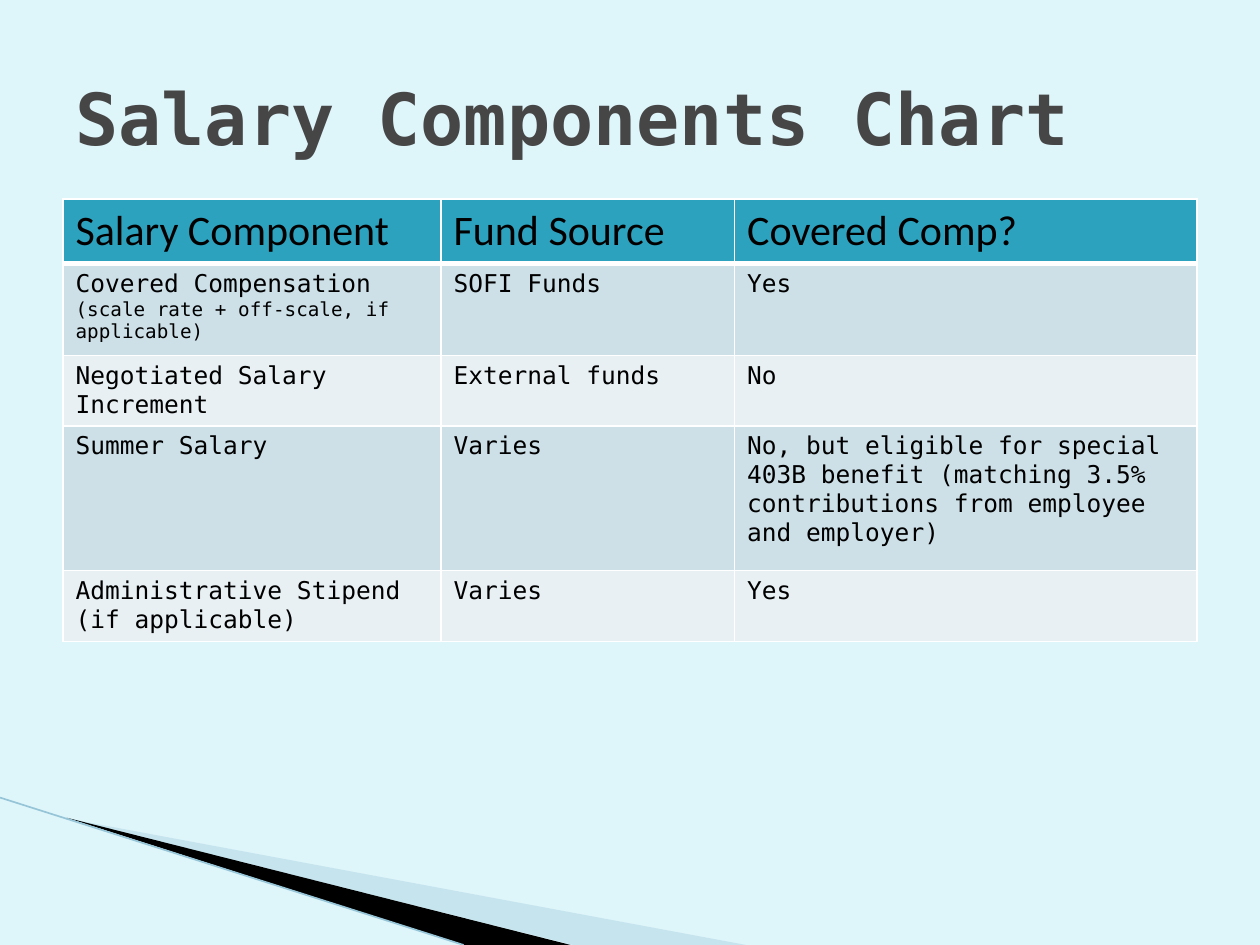
"""Build the salary components slide."""
import dataclasses

import lxml.etree
import pptx
import pptx.dml.color
import pptx.enum.shapes
import pptx.enum.text
import pptx.oxml.ns
import pptx.util

Inches = pptx.util.Inches
Pt = pptx.util.Pt
qn = pptx.oxml.ns.qn


def rgb(value):
    """Turn a hex string into a colour."""
    return pptx.dml.color.RGBColor.from_string(value)


@dataclasses.dataclass(frozen=True)
class Theme:
    """Colours, fonts and type sizes."""
    background: str = "DEF5FA"
    title: str = "464646"
    text: str = "000000"
    header: str = "2DA2BF"
    bands: tuple = ("CDE0E8", "E8F0F4")
    border: str = "FFFFFF"
    pale_wedge: str = "A0CBDC"
    dark_wedge: str = "000000"
    edge: str = "97C5D8"
    mono: str = "DejaVu Sans Mono"
    sans: str = "Calibri"
    title_size: int = 41
    header_size: int = 24
    body_size: int = 14
    note_size: int = 11


class SlideBuilder:
    """Draw themed elements on one slide."""

    def __init__(self, slide, theme):
        """Keep the slide and theme, and paint the background."""
        self.slide = slide
        self.theme = theme
        slide.background.fill.solid()
        slide.background.fill.fore_color.rgb = rgb(theme.background)

    def style(self, paragraph, size, color, font, bold=False):
        """Set the font of a paragraph."""
        paragraph.font.size = Pt(size)
        paragraph.font.color.rgb = rgb(color)
        paragraph.font.name = font
        paragraph.font.bold = bold

    def wedge(self, points, color, opacity=100):
        """Draw a filled outline without a line."""
        corners = [(Inches(x), Inches(y)) for x, y in points]
        builder = self.slide.shapes.build_freeform(*corners[0], scale=1.0)
        builder.add_line_segments(corners[1:], close=True)
        shape = builder.convert_to_shape()
        shape.shadow.inherit = False
        shape.line.fill.background()
        shape.fill.solid()
        shape.fill.fore_color.rgb = rgb(color)
        if opacity < 100:
            tint = next(shape.fill._xPr.iter(qn("a:srgbClr")))
            lxml.etree.SubElement(tint, qn("a:alpha"), val=str(opacity * 1000))

    def line(self, start, end, color, width):
        """Draw a straight line."""
        connector = self.slide.shapes.add_connector(
            pptx.enum.shapes.MSO_CONNECTOR.STRAIGHT,
            *(Inches(value) for value in start + end))
        connector.line.color.rgb = rgb(color)
        connector.line.width = Pt(width)
        lxml.etree.SubElement(connector._element.spPr, qn("a:effectLst"))

    def title(self, text, left, top, width, height):
        """Add the slide title."""
        box = self.slide.shapes.add_textbox(
            Inches(left), Inches(top), Inches(width), Inches(height))
        frame = box.text_frame
        frame.word_wrap = True
        frame.vertical_anchor = pptx.enum.text.MSO_ANCHOR.MIDDLE
        frame.text = text
        theme = self.theme
        self.style(frame.paragraphs[0], theme.title_size, theme.title, theme.mono, True)

    def borders(self, cell, widths):
        """Set cell border widths in points by side."""
        properties = cell._tc.get_or_add_tcPr()
        for side, width in widths.items():
            edge = lxml.etree.SubElement(properties, qn(f"a:ln{side}"), w=str(Pt(width)))
            fill = lxml.etree.SubElement(edge, qn("a:solidFill"))
            lxml.etree.SubElement(fill, qn("a:srgbClr"), val=self.theme.border)

    def cell(self, cell, text, row, note_row):
        """Fill and style one table cell."""
        theme = self.theme
        header = row == 0
        self.borders(cell, {"L": 1, "R": 1, "T": 3 if row == 1 else 1, "B": 3 if header else 1})
        cell.fill.solid()
        cell.fill.fore_color.rgb = rgb(theme.header if header else theme.bands[(row - 1) % 2])
        cell.text = text
        for index, paragraph in enumerate(cell.text_frame.paragraphs):
            if header:
                self.style(paragraph, theme.header_size, theme.text, theme.sans)
            else:
                note = row == note_row and index > 0
                size = theme.note_size if note else theme.body_size
                self.style(paragraph, size, theme.text, theme.mono)

    def table(self, rows, left, top, widths, heights, note_row):
        """Add a banded table with a header row."""
        table = self.slide.shapes.add_table(
            len(rows), len(widths), Inches(left), Inches(top),
            Inches(sum(widths)), Inches(sum(heights))).table
        for column, width in zip(table.columns, widths):
            column.width = Inches(width)
        for row, (texts, height) in enumerate(zip(rows, heights)):
            table.rows[row].height = Inches(height)
            for column, text in enumerate(texts):
                self.cell(table.cell(row, column), text, row, note_row)


ROWS = [
    ("Salary Component", "Fund Source", "Covered Comp?"),
    ("Covered Compensation\n(scale rate + off-scale, if applicable)", "SOFI Funds", "Yes"),
    ("Negotiated Salary Increment", "External funds", "No"),
    ("Summer Salary", "Varies",
     "No, but eligible for special 403B benefit "
     "(matching 3.5% contributions from employee and employer)"),
    ("Administrative Stipend\n(if applicable)", "Varies", "Yes"),
]


def main():
    """Build and save the deck."""
    deck = pptx.Presentation()
    deck.slide_width, deck.slide_height = Inches(10), Inches(7.5)
    theme = Theme()
    page = SlideBuilder(deck.slides.add_slide(deck.slide_layouts[6]), theme)
    page.wedge([(0.55, 6.5), (5.92, 7.5), (4.55, 7.5)], theme.pale_wedge, 40)
    page.wedge([(0.53, 6.49), (4.53, 7.5), (3.68, 7.5)], theme.dark_wedge)
    page.line((0, 6.33), (3.68, 7.5), theme.edge, 0.95)
    page.table(ROWS, 0.5, 1.58, (3, 2.33, 3.67), (0.51, 0.73, 0.56, 1.15, 0.56), note_row=1)
    page.title("Salary Components Chart", 0.5, 0.3, 9, 1.25)
    deck.save("out.pptx")


if __name__ == "__main__":
    main()
